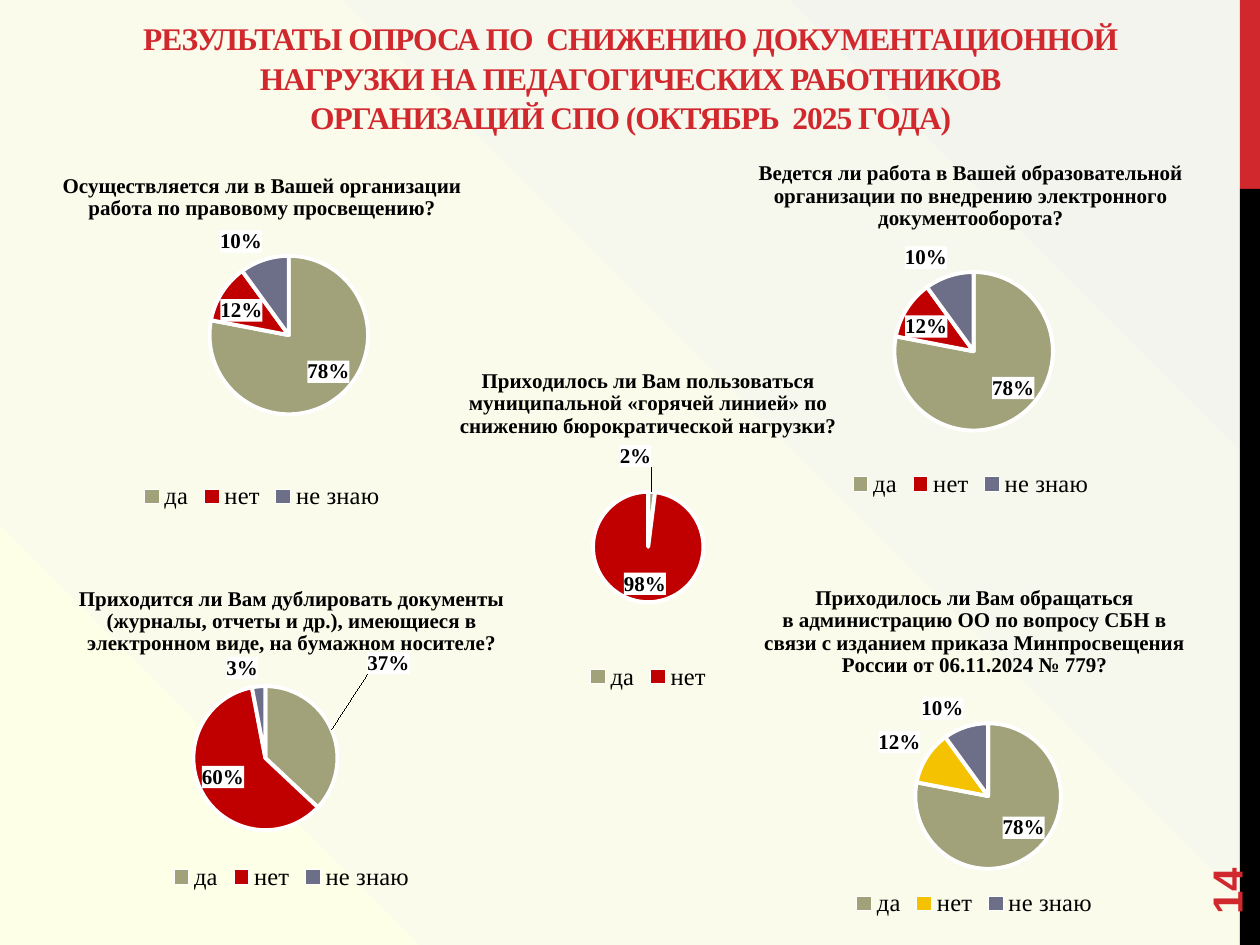
"""Builds the slide with five survey pie charts."""
from lxml import etree
from pptx import Presentation
from pptx.chart.data import CategoryChartData
from pptx.dml.color import RGBColor
from pptx.enum.chart import XL_CHART_TYPE, XL_LABEL_POSITION, XL_LEGEND_POSITION
from pptx.enum.shapes import MSO_SHAPE
from pptx.enum.text import MSO_ANCHOR, PP_ALIGN
from pptx.oxml.ns import qn
from pptx.util import Inches, Pt

PIE = XL_CHART_TYPE.PIE
BEST_FIT = XL_LABEL_POSITION.BEST_FIT
LEGEND_BOTTOM = XL_LEGEND_POSITION.BOTTOM
RECTANGLE = MSO_SHAPE.RECTANGLE
BOTTOM, MIDDLE = MSO_ANCHOR.BOTTOM, MSO_ANCHOR.MIDDLE
CENTER, LEFT = PP_ALIGN.CENTER, PP_ALIGN.LEFT

RED, BLACK, WHITE = "D1282E", "000000", "FFFFFF"
OLIVE, CRIMSON, YELLOW, SLATE = "A1A17A", "C00000", "F5C201", "6C6F87"
SERIF, SANS = "Times New Roman", "Arial"
ANSWERS = ("да", "нет", "не знаю")
USUAL_COLORS = (OLIVE, CRIMSON, SLATE)

HEADING = ("РЕЗУЛЬТАТЫ ОПРОСА ПО  СНИЖЕНИЮ ДОКУМЕНТАЦИОННОЙ\v"
           "НАГРУЗКИ НА ПЕДАГОГИЧЕСКИХ РАБОТНИКОВ\v"
           "ОРГАНИЗАЦИЙ СПО (ОКТЯБРЬ  2025 ГОДА)")

SURVEY = [
    dict(question="Ведется ли работа в Вашей образовательной организации "
                  "по внедрению электронного документооборота?",
         box=(5.43, 1.13, 4.55, 2.86), plot_area=(0.1, 0.36, 0.81, 0.44),
         values=(0.78, 0.12, 0.1)),
    dict(question="Приходится ли Вам дублировать документы (журналы, отчеты и др.), "
                  "имеющиеся в электронном виде, на бумажном носителе?",
         box=(0, 4.51, 4.63, 2.6), plot_area=(0, 0.36, 0.91, 0.44),
         values=(0.37, 0.6, 0.03), label_shift=(0.05, -0.16)),
    dict(question="Приходилось ли Вам обращаться\nв администрацию ОО по вопросу СБН "
                  "в связи с изданием приказа Минпросвещения России от 06.11.2024 № 779?",
         box=(5.58, 4.5, 4.31, 2.82), plot_area=(0.06, 0.44, 0.93, 0.41),
         values=(0.78, 0.12, 0.1), colors=(OLIVE, YELLOW, SLATE)),
    dict(question="Приходилось ли Вам пользоваться муниципальной «горячей линией» "
                  "по снижению бюрократической нагрузки?",
         box=(2.95, 2.78, 4.39, 2.74), plot_area=(0.4, 0.41, 0.2, 0.32),
         values=(0.02, 0.98), label_shift=(-0.03, -0.05)),
    dict(question="Осуществляется ли в Вашей организации работа "
                  "по правовому просвещению?",
         box=(-0.28, 1.23, 4.72, 2.86), plot_area=(0.19, 0.28, 0.71, 0.44),
         values=(0.78, 0.12, 0.1)),
]


def color(value):
    return RGBColor.from_string(value)


def lengths(box):
    return [Inches(value) for value in box]


def set_font(font, size, name=SERIF, bold=False, ink=BLACK):
    font.size, font.name, font.bold = Pt(size), name, bold
    font.color.rgb = color(ink)


def add_xml(parent, tag, **attributes):
    return etree.SubElement(parent, qn(tag), **attributes)


def add_solid_fill(parent, value):
    add_xml(add_xml(parent, "a:solidFill"), "a:srgbClr", val=value)


def manual_layout(**settings):
    layout = etree.Element(qn("c:layout"))
    manual = add_xml(layout, "c:manualLayout")
    for tag, value in settings.items():
        add_xml(manual, f"c:{tag}", val=str(value))
    return layout


class SurveySlide:
    """Holds the current slide and draws its elements in one style."""

    def __init__(self, slide):
        self.slide = slide

    def background(self, stops):
        self.slide.background.fill.gradient()
        gradient = next(self.slide.element.iter(qn("a:gradFill")))
        for child in list(gradient):
            gradient.remove(child)
        stop_list = add_xml(gradient, "a:gsLst")
        for percent, value in stops:
            stop = add_xml(stop_list, "a:gs", pos=str(percent * 1000))
            add_xml(stop, "a:srgbClr", val=value)
        circle = add_xml(gradient, "a:path", path="circle")
        add_xml(circle, "a:fillToRect", t="100000", r="100000")

    def bar(self, box, fill):
        shape = self.slide.shapes.add_shape(RECTANGLE, *lengths(box))
        shape.shadow.inherit = False
        shape.fill.solid()
        shape.fill.fore_color.rgb = color(fill)
        shape.line.fill.background()

    def text(self, box, text, size, font, align, anchor, rotation=0, spacing=0):
        shape = self.slide.shapes.add_textbox(*lengths(box))
        shape.rotation = rotation
        frame = shape.text_frame
        frame.word_wrap, frame.vertical_anchor = True, anchor
        paragraph = frame.paragraphs[0]
        paragraph.text = text
        paragraph.alignment, paragraph.line_spacing = align, 1.05
        for run in paragraph.runs:
            set_font(run.font, size, font, True, RED)
            run._r.get_or_add_rPr().set("spc", str(spacing))

    def pie(self, question, box, plot_area, values, colors=USUAL_COLORS, label_shift=None):
        data = CategoryChartData(number_format="0%")
        data.categories = ANSWERS[:len(values)]
        data.add_series("Series 1", values)
        chart = self.slide.shapes.add_chart(PIE, *lengths(box), data).chart
        set_font(chart.font, 10, SANS)
        self.question(chart, question)
        chart.has_legend = True
        chart.legend.position = LEGEND_BOTTOM
        chart.legend.include_in_layout = False
        set_font(chart.legend.font, 14)
        chart.plots[0].vary_by_categories = True
        self.place_plot(chart, plot_area)
        series = chart.plots[0].series[0]
        for index, fill in enumerate(colors[:len(values)]):
            slice_format = series.points[index].format
            slice_format.fill.solid()
            slice_format.fill.fore_color.rgb = color(fill)
            slice_format.line.color.rgb = color(WHITE)
            slice_format.line.width = Pt(2.25)
        self.labels(chart, series, label_shift)

    def question(self, chart, question):
        chart.has_title = True
        chart.chart_title.include_in_layout = False
        frame = chart.chart_title.text_frame
        frame.text = question
        for paragraph in frame.paragraphs:
            for run in paragraph.runs:
                set_font(run.font, 12, bold=True)

    def place_plot(self, chart, plot_area):
        left, top, width, height = plot_area
        area = next(chart.element.iter(qn("c:plotArea")))
        for layout in area.findall(qn("c:layout")):
            area.remove(layout)
        area.insert(0, manual_layout(layoutTarget="inner", xMode="edge", yMode="edge",
                                     x=left, y=top, w=width, h=height))

    def labels(self, chart, series, shift):
        labels = series.data_labels
        labels.show_value = True
        labels.number_format, labels.number_format_is_linked = "0%", False
        targets = [labels]
        if shift:
            targets.append(series.points[0].data_label)
        for target in targets:
            target.position = BEST_FIT
            set_font(target.font, 12, bold=True)
        for tag in ("c:dLbls", "c:dLbl"):
            for element in chart.element.iter(qn(tag)):
                properties = etree.Element(qn("c:spPr"))
                add_solid_fill(properties, WHITE)
                element.find(qn("c:txPr")).addprevious(properties)
        if shift:
            label = next(chart.element.iter(qn("c:dLbl")))
            label.insert(1, manual_layout(x=shift[0], y=shift[1]))


def main():
    presentation = Presentation()
    presentation.slide_width, presentation.slide_height = Inches(10), Inches(7.5)
    page = SurveySlide(presentation.slides.add_slide(presentation.slide_layouts[6]))
    page.background([(0, "FDFFE7"), (38, "FAFBEA"), (99, "F4F4EF")])
    page.bar((9.84, 0, 0.16, 1.5), RED)
    page.bar((9.84, 1.5, 0.16, 6), BLACK)
    page.text((0.43, 0.15, 9.15, 0.98), HEADING, 18, SERIF, CENTER, BOTTOM, spacing=-60)
    page.text((9, 6.44, 1.44, 0.4), "14", 24, SANS, LEFT, MIDDLE, rotation=270)
    for entry in SURVEY:
        page.pie(**entry)
    presentation.save("out.pptx")


if __name__ == "__main__":
    main()
